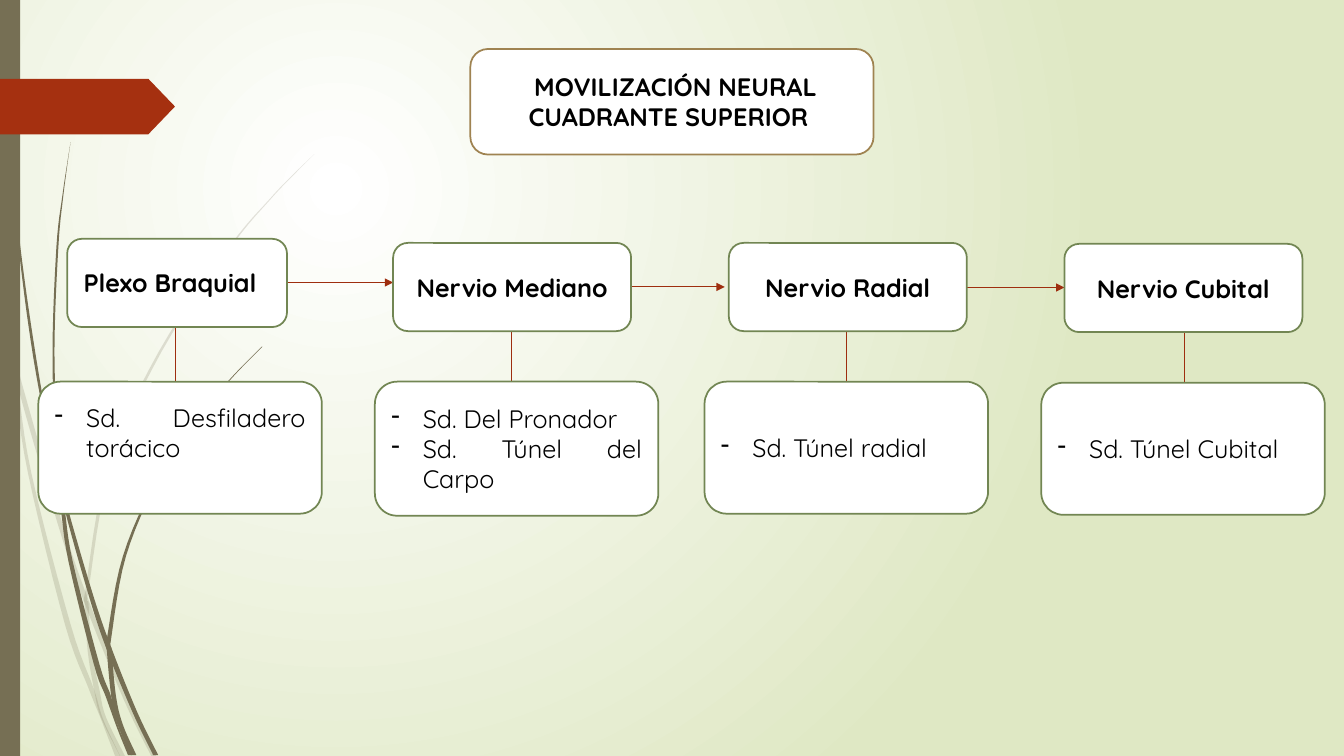
from dataclasses import dataclass

from lxml import etree
from pptx import Presentation
from pptx.dml.color import RGBColor
from pptx.enum import shapes, text
from pptx.oxml import ns
from pptx.util import Pt

WHITE = RGBColor(0xFF, 0xFF, 0xFF)
BLACK = RGBColor(0x00, 0x00, 0x00)
PALE_GREEN = RGBColor(0xDF, 0xE8, 0xC4)
OLIVE = RGBColor(0x76, 0x6F, 0x54)
RED = RGBColor(0xA5, 0x30, 0x10)
ARROW_RED = RGBColor(0x9E, 0x2E, 0x0F)
GOLD = RGBColor(0x9F, 0x83, 0x51)
GREEN = RGBColor(0x72, 0x86, 0x53)
FONT = "Quicksand"
INSET_X, INSET_Y = 7.2, 3.6
CURVE_STEPS = 6


@dataclass
class Box:
    left: float
    top: float
    width: float
    height: float


@dataclass
class Nerve:
    name: str
    name_box: Box
    syndromes: list[str]
    syndrome_box: Box
    stem_x: float
    stem_top: float
    name_extra_right: float = 0
    syndrome_extra_bottom: float = 0


@dataclass
class Strand:
    """A tapering blade of grass: (x, y, width) along its middle."""
    points: list[tuple[float, float, float]]
    opacity: int = 100


NERVES = [
    Nerve("Plexo Braquial", Box(48, 170.6, 157, 63), ["Sd. Desfiladero torácico"],
          Box(27.4, 272.6, 202.5, 94.3), 125.7, 234, 10, 21.6),
    Nerve("Nervio Mediano", Box(280.8, 173.5, 170, 63),
          ["Sd. Del Pronador", "Sd. Túnel del Carpo"],
          Box(267.8, 272.6, 202.5, 95.8), 365.6, 237),
    Nerve("Nervio Radial", Box(520.6, 173.5, 170, 63), ["Sd. Túnel radial"],
          Box(503.3, 272.6, 202.5, 94.3), 604.8, 237),
    Nerve("Nervio Cubital", Box(760.3, 174.2, 170, 63), ["Sd. Túnel Cubital"],
          Box(743.8, 273.4, 202.5, 94.3), 845.8, 237),
]
# Start x, end x and height of the arrows between nerves
ARROWS = [(205, 280.8, 201.8), (442, 517.7, 205), (689.8, 760.3, 205.4)]

STRANDS = [
    Strand([(0, 203, 0), (5.2, 232, 2.8), (11, 271, 2.5), (21.2, 338, 2.4),
            (48.4, 446, 4), (65.2, 492, 3.6), (73, 514, 1.5), (84, 540, 3.6)], 20),
    Strand([(10.1, 248, 0), (14, 274, 3.4), (43.5, 376, 3.4), (62.3, 431, 3.6),
            (90.2, 500, 3.4), (109.8, 540, 3.6)], 20),
    Strand([(224.6, 110, 0), (208.4, 126, 0.7), (193, 142.2, 0.8), (164.6, 176, 1.4),
            (114.5, 251, 2), (78.1, 332.5, 2.4), (62.3, 420.5, 2.2), (61.9, 432, 2.9),
            (64.1, 465, 2.9), (69, 492, 3.8), (73.8, 512, 3.6), (87.5, 540, 3.6)], 20),
    Strand([(2.5, 0, 0.7), (3.2, 34.6, 0.7), (5.4, 79, 0.7), (12.9, 167.5, 1.2),
            (24.8, 255.6, 2), (40.8, 343, 1), (44.8, 364, 2.6), (50.4, 401, 3),
            (69, 474.5, 4), (77.4, 497.5, 3.8), (84.2, 520, 1.2), (92.9, 539.5, 2.9)]),
    Strand([(50.4, 101.5, 0), (45, 139, 0.7), (41, 176.4, 1.4), (38.2, 251.3, 1.4),
            (40.7, 324, 2), (43.2, 340, 0.8), (47.5, 364, 2.4), (65.2, 426, 3.2),
            (78.3, 464.4, 3.8), (96.5, 509, 3.4), (111.2, 539.3, 3.6)]),
    Strand([(187.2, 247.7, 0.5), (166.3, 269, 0.7), (147.2, 292, 1), (113, 342, 1.5),
            (89, 397, 2.2), (78.1, 455, 3), (78.1, 465, 3.4), (81.2, 497.5, 3.4),
            (85.9, 517.7, 3.8), (95.5, 539.5, 4)]),
]


def paint(shape, fill: RGBColor, line: RGBColor | None = None) -> None:
    shape.shadow.inherit = False
    shape.fill.solid()
    shape.fill.fore_color.rgb = fill
    if line is None:
        shape.line.fill.background()
    else:
        shape.line.color.rgb = line
        shape.line.width = Pt(1.25)


def add_preset(slide, kind, box: Box, fill: RGBColor, line: RGBColor | None = None):
    shape = slide.shapes.add_shape(
        kind, Pt(box.left), Pt(box.top), Pt(box.width), Pt(box.height))
    paint(shape, fill, line)
    return shape


def write(shape, lines: list[str], *, bold: bool = False, dashed: bool = False,
          extra_right: float = 0, extra_bottom: float = 0) -> None:
    frame = shape.text_frame
    frame.word_wrap = True
    frame.vertical_anchor = text.MSO_ANCHOR.MIDDLE
    frame.margin_left, frame.margin_right = Pt(INSET_X), Pt(INSET_X + extra_right)
    frame.margin_top, frame.margin_bottom = Pt(INSET_Y), Pt(INSET_Y + extra_bottom)
    for index, line in enumerate(lines):
        paragraph = frame.add_paragraph() if index else frame.paragraphs[0]
        paragraph.alignment = text.PP_ALIGN.JUSTIFY if dashed else text.PP_ALIGN.CENTER
        run = paragraph.add_run()
        run.text = line
        run.font.name, run.font.size, run.font.bold = FONT, Pt(18), bold
        run.font.color.rgb = BLACK
        if dashed:
            properties = paragraph._p.get_or_add_pPr()
            properties.set("marL", str(Pt(22.5)))
            properties.set("indent", str(-Pt(22.5)))
            etree.SubElement(properties, ns.qn("a:buChar"), char="-")


def add_line(slide, start: tuple[float, float], end: tuple[float, float],
             arrow: bool = False) -> None:
    connector = slide.shapes.add_connector(
        shapes.MSO_CONNECTOR.STRAIGHT, *map(Pt, start), *map(Pt, end))
    connector.line.color.rgb = ARROW_RED
    connector.line.width = Pt(0.75)
    if arrow:
        etree.SubElement(connector.line._get_or_add_ln(), ns.qn("a:tailEnd"), type="triangle")
    etree.SubElement(connector._element.spPr, ns.qn("a:effectLst"))


def smooth(points: list[tuple[float, float, float]]) -> list[tuple[float, ...]]:
    """Catmull-Rom curve through the points."""
    padded = [points[0], *points, points[-1]]
    curve = []
    for a, b, c, d in zip(padded, padded[1:], padded[2:], padded[3:]):
        for step in range(CURVE_STEPS):
            t = step / CURVE_STEPS
            curve.append(tuple(
                q + t * (r - p) / 2 + t * t * (p - 2.5 * q + 2 * r - s / 2)
                + t ** 3 * (1.5 * (q - r) + (s - p) / 2)
                for p, q, r, s in zip(a, b, c, d)))
    return [*curve, points[-1]]


def add_strand(slide, strand: Strand) -> None:
    middle = smooth(strand.points)
    outline = [(Pt(x - w / 2), Pt(y)) for x, y, w in middle]
    outline += [(Pt(x + w / 2), Pt(y)) for x, y, w in reversed(middle)]
    builder = slide.shapes.build_freeform(*outline[0])
    builder.add_line_segments(outline[1:], close=True)
    blade = builder.convert_to_shape()
    paint(blade, OLIVE)
    if strand.opacity < 100:
        color = blade._element.spPr.find(".//" + ns.qn("a:srgbClr"))
        etree.SubElement(color, ns.qn("a:alpha"), val=str(strand.opacity * 1000))


def set_background(slide) -> None:
    fill = slide.background.fill
    fill.gradient()
    for stop, color in zip(fill.gradient_stops, (WHITE, PALE_GREEN)):
        stop.color.rgb = color
    linear = slide.element.find(".//" + ns.qn("a:lin"))
    radial = etree.Element(ns.qn("a:path"), path="circle")
    etree.SubElement(radial, ns.qn("a:fillToRect"),
                     l="50000", t="50000", r="100000", b="100000")
    linear.getparent().replace(linear, radial)


def main() -> None:
    deck = Presentation()
    deck.slide_width, deck.slide_height = Pt(960), Pt(540)
    slide = deck.slides.add_slide(deck.slide_layouts[6])
    preset = shapes.MSO_SHAPE

    # Backdrop: grass, side bar and page marker
    set_background(slide)
    for strand in STRANDS:
        add_strand(slide, strand)
    add_preset(slide, preset.RECTANGLE, Box(0, 0, 14.4, 540), OLIVE)
    marker = add_preset(slide, preset.PENTAGON, Box(0, 56.3, 125, 39.6), RED)
    marker.adjustments[0] = 0.48

    # Title
    title = add_preset(slide, preset.ROUNDED_RECTANGLE, Box(336, 35, 288, 75.4), WHITE, GOLD)
    write(title, [" MOVILIZACIÓN NEURAL", "CUADRANTE SUPERIOR "], bold=True)

    # Links, below the boxes
    for start_x, end_x, y in ARROWS:
        add_line(slide, (start_x, y), (end_x, y), arrow=True)
    for nerve in NERVES:
        add_line(slide, (nerve.stem_x, nerve.stem_top), (nerve.stem_x, nerve.syndrome_box.top))

    # Nerves and their syndromes
    for nerve in NERVES:
        name = add_preset(slide, preset.ROUNDED_RECTANGLE, nerve.name_box, WHITE, GREEN)
        write(name, [nerve.name], bold=True, extra_right=nerve.name_extra_right)
        detail = add_preset(slide, preset.ROUNDED_RECTANGLE, nerve.syndrome_box, WHITE, GREEN)
        write(detail, nerve.syndromes, dashed=True, extra_bottom=nerve.syndrome_extra_bottom)

    deck.save("out.pptx")


if __name__ == "__main__":
    main()
